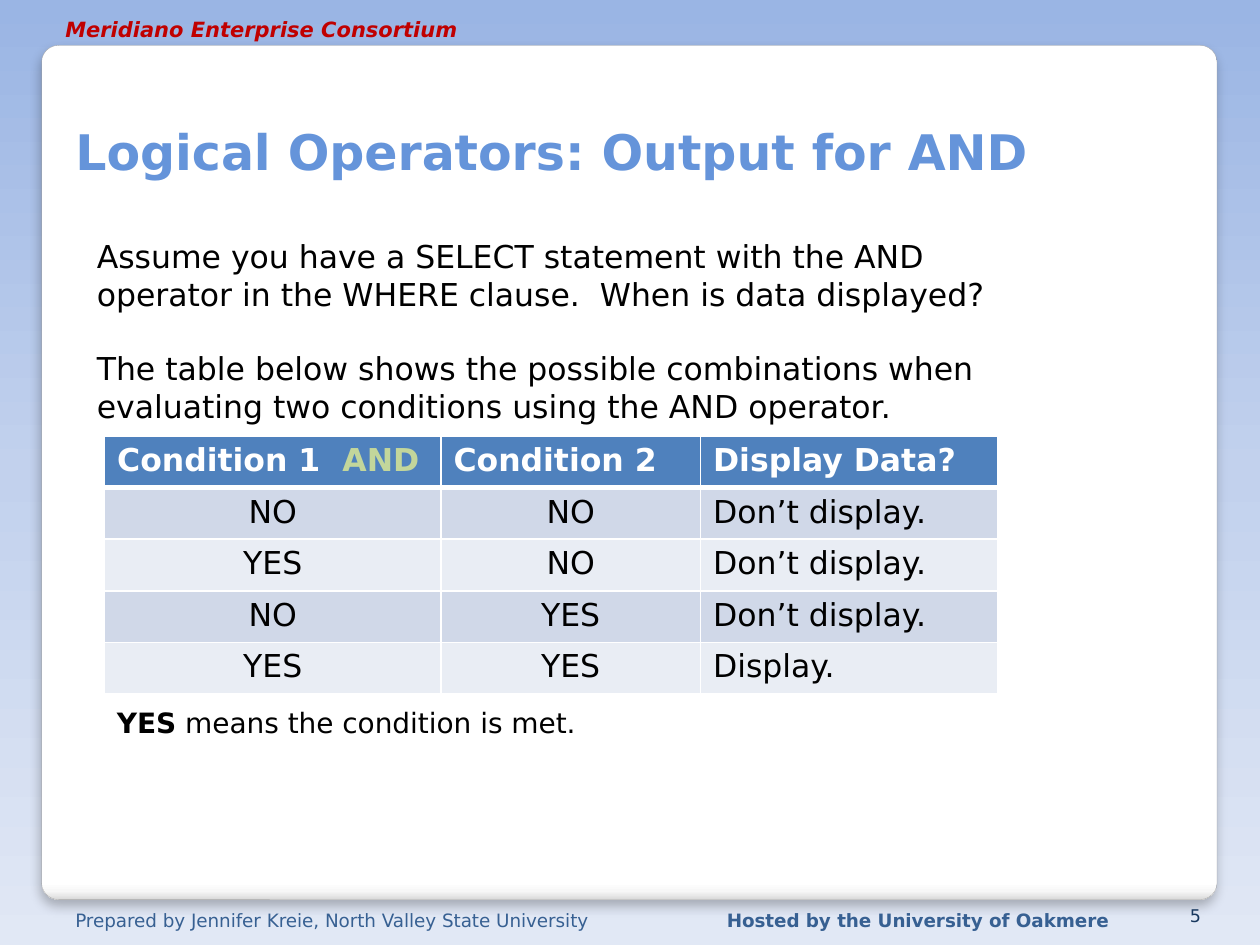
from dataclasses import dataclass

from lxml import etree
from pptx import Presentation
from pptx.dml.color import RGBColor
from pptx.enum.shapes import MSO_SHAPE
from pptx.enum.text import MSO_ANCHOR, MSO_AUTO_SIZE, PP_ALIGN
from pptx.oxml.ns import qn
from pptx.util import Inches, Pt

ROUNDED = MSO_SHAPE.ROUNDED_RECTANGLE
TOP, BOTTOM = MSO_ANCHOR.TOP, MSO_ANCHOR.BOTTOM
LEFT, CENTER, RIGHT = PP_ALIGN.LEFT, PP_ALIGN.CENTER, PP_ALIGN.RIGHT
FIT_SHAPE, NO_FIT = MSO_AUTO_SIZE.SHAPE_TO_FIT_TEXT, MSO_AUTO_SIZE.NONE

FONT = "DejaVu Sans"
COLORS = {
    "white": "FFFFFF",
    "black": "000000",
    "title": "6594DA",
    "footer": "376092",
    "number": "17375E",
    "banner": "C00000",
    "card_line": "A4A4A4",
    "header": "4F81BD",
    "operator": "C3D69B",
    "band_dark": "D0D8E8",
    "band_light": "E9EDF4",
}
SKY = [(0, "9AB5E4"), (50, "C2D1ED"), (100, "E1E8F5")]
CARD = [(0, "FFFFFF"), (98, "FFFFFF"), (99, "F7F7F7"), (100, "DADADA")]

COLUMN_WIDTHS = [2.67, 2.06, 2.36]
COLUMN_ALIGNS = [CENTER, CENTER, LEFT]
ROW_HEIGHT = 0.41
ROWS = [
    ["Condition 1  ", "Condition 2", "Display Data?"],
    ["NO", "NO", "Don’t display."],
    ["YES", "NO", "Don’t display."],
    ["NO", "YES", "Don’t display."],
    ["YES", "YES", "Display."],
]


@dataclass
class Label:
    box: tuple
    paragraphs: list
    size: float
    color: str
    bold: bool = False
    italic: bool = False
    align: PP_ALIGN = LEFT
    anchor: MSO_ANCHOR = TOP
    grow: bool = False
    gap: float = 0
    lead: str = ""


LABELS = [
    Label((0.5, 7.17, 4.46, 0.23),
          ["Prepared by Jennifer Kreie, North Valley State University"], 10.5, "footer"),
    Label((5.67, 7.17, 3.33, 0.23), ["Hosted by the University of Oakmere"],
          10.5, "footer", bold=True),
    Label((0.42, 0.08, 3.33, 0.23), ["Meridiano Enterprise Consortium"],
          12, "banner", bold=True, italic=True),
    Label((0.5, 0.33, 8.95, 1.15), ["Logical Operators: Output for AND"],
          28, "title", bold=True, anchor=BOTTOM),
    Label((9.13, 7.17, 0.5, 0.23), ["5"], 10, "number", align=RIGHT, anchor=BOTTOM),
    Label((0.67, 1.83, 7.58, 1.62), [
        "Assume you have a SELECT statement with the AND operator in the WHERE clause.  "
        "When is data displayed?",
        "The table below shows the possible combinations when evaluating two conditions "
        "using the AND operator.",
    ], 18, "black", grow=True, gap=21),
    Label((0.83, 5.55, 6.92, 0.37), [" means the condition is met."],
          16, "black", grow=True, lead="YES"),
]


def rgb(name: str) -> RGBColor:
    return RGBColor.from_string(COLORS[name])


def style_font(font, size: float, color: str, bold: bool, italic: bool = False) -> None:
    font.name = FONT
    font.size = Pt(size)
    font.bold = bold
    font.italic = italic
    font.color.rgb = rgb(color)


def add_color(parent, color: str):
    return etree.SubElement(parent, qn("a:srgbClr"), val=color)


def set_gradient(fill, element, stops: list) -> None:
    fill.gradient()
    fill.gradient_angle = 270
    stop_list = next(element.iter(qn("a:gsLst")))
    for stop in list(stop_list):
        stop_list.remove(stop)
    for position, color in stops:
        add_color(etree.SubElement(stop_list, qn("a:gs"), pos=str(position * 1000)), color)


def add_card(s) -> None:
    sp = s.shapes.add_shape(ROUNDED, Inches(0.33), Inches(0.36), Inches(9.33), Inches(6.78))
    sp.adjustments[0] = 0.02
    set_gradient(sp.fill, sp.element, CARD)
    sp.line.color.rgb = rgb("card_line")
    sp.line.width = Pt(0.16)
    sp.shadow.inherit = False
    effects = sp.element.spPr.find(qn("a:effectLst"))
    shadow = etree.SubElement(effects, qn("a:outerShdw"), blurRad=str(Pt(6)),
                              dist=str(Pt(4)), dir="5400000", rotWithShape="0")
    etree.SubElement(add_color(shadow, COLORS["black"]), qn("a:alpha"), val="25000")


def add_label(s, label: Label) -> None:
    tf = s.shapes.add_textbox(*map(Inches, label.box)).text_frame
    tf.word_wrap = True
    tf.auto_size = FIT_SHAPE if label.grow else NO_FIT
    tf.vertical_anchor = label.anchor
    for index, text in enumerate(label.paragraphs):
        p = tf.add_paragraph() if index else tf.paragraphs[0]
        p.alignment = label.align
        if index:
            p.space_before = Pt(label.gap)
        style_font(p.font, label.size, label.color, label.bold, label.italic)
        if label.lead:
            r = p.add_run()
            r.text = label.lead
            r.font.bold = True
        p.add_run().text = text


def set_borders(cell, top: float, bottom: float) -> None:
    tc_pr = cell._tc.get_or_add_tcPr()
    for side, width in {"L": 1, "R": 1, "T": top, "B": bottom}.items():
        line = etree.SubElement(tc_pr, qn(f"a:ln{side}"), w=str(Pt(width)))
        add_color(etree.SubElement(line, qn("a:solidFill")), COLORS["white"])


def add_truth_table(s) -> None:
    table = s.shapes.add_table(
        len(ROWS), len(COLUMN_WIDTHS), Inches(0.83), Inches(3.46),
        Inches(sum(COLUMN_WIDTHS)), Inches(ROW_HEIGHT * len(ROWS))).table
    for column, width in zip(table.columns, COLUMN_WIDTHS):
        column.width = Inches(width)
    for i, values in enumerate(ROWS):
        header = i == 0
        band = "header" if header else "band_dark" if i % 2 else "band_light"
        table.rows[i].height = Inches(ROW_HEIGHT)
        for j, value in enumerate(values):
            cell = table.cell(i, j)
            set_borders(cell, 3 if i == 1 else 1, 3 if header else 1)
            cell.fill.solid()
            cell.fill.fore_color.rgb = rgb(band)
            p = cell.text_frame.paragraphs[0]
            p.alignment = LEFT if header else COLUMN_ALIGNS[j]
            r = p.add_run()
            r.text = value
            style_font(r.font, 18, "white" if header else "black", header)
    r = table.cell(0, 0).text_frame.paragraphs[0].add_run()
    r.text = "AND"
    style_font(r.font, 18, "operator", True)


def main() -> None:
    prs = Presentation()
    prs.slide_width, prs.slide_height = Inches(10), Inches(7.5)
    s = prs.slides.add_slide(prs.slide_layouts[6])
    set_gradient(s.background.fill, s.element, SKY)
    add_card(s)
    for label in LABELS[:5]:
        add_label(s, label)
    add_truth_table(s)
    for label in LABELS[5:]:
        add_label(s, label)
    prs.save("out.pptx")


if __name__ == "__main__":
    main()
